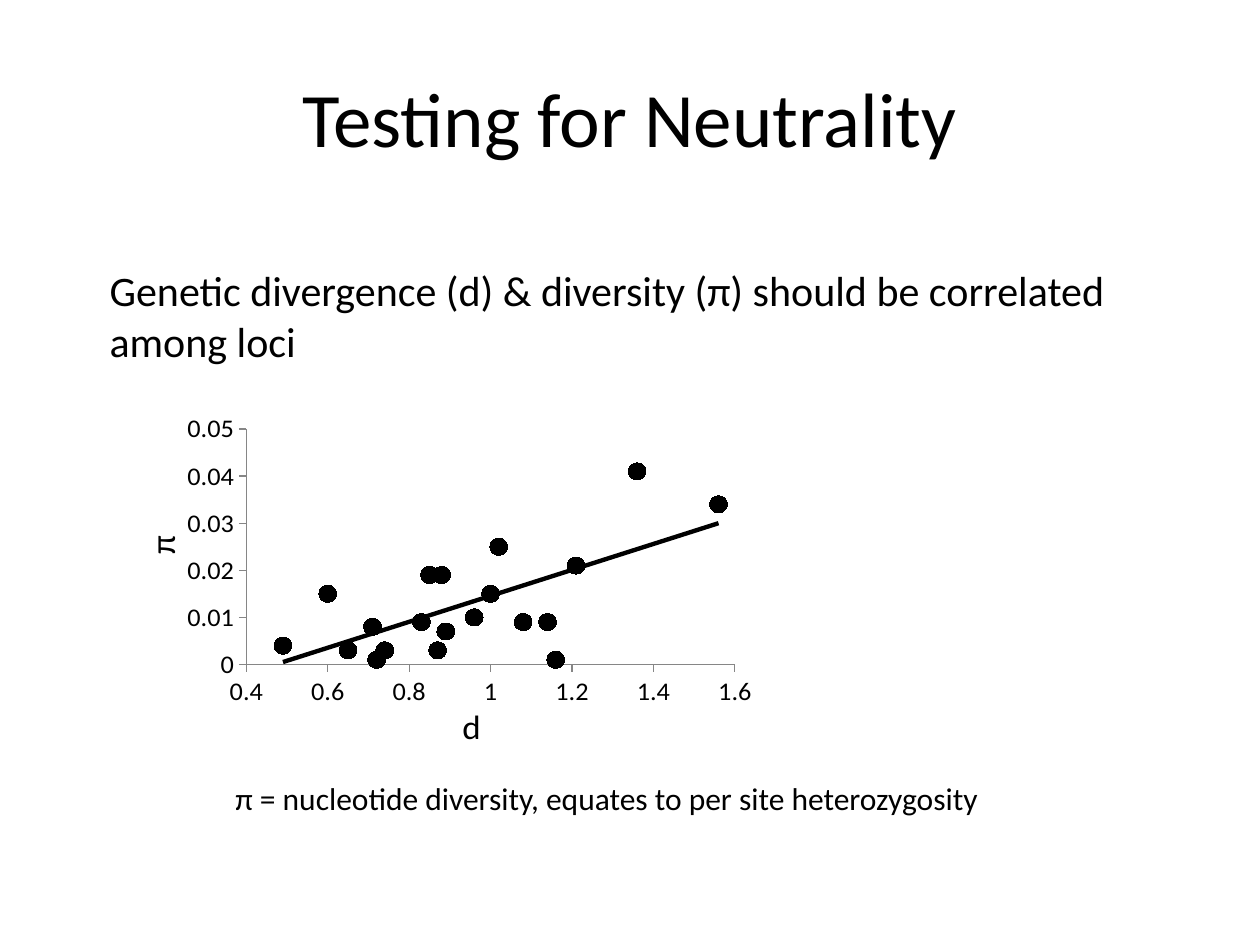
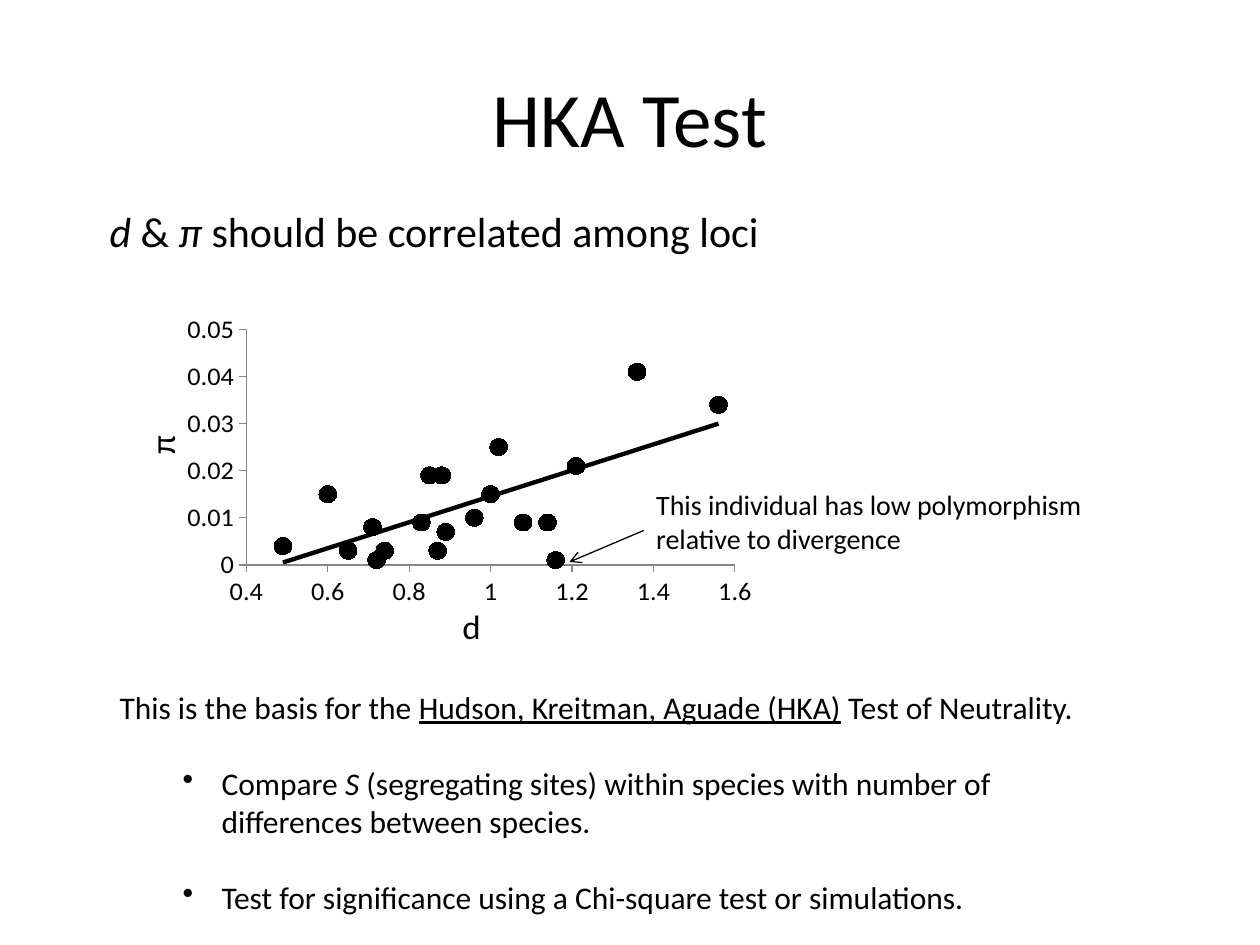
from pptx import Presentation
from pptx import oxml, util as u
from pptx.chart import data
from pptx.dml.color import RGBColor
from pptx.enum import chart as ch, shapes, text
from pptx.oxml import ns

FONT = "Calibri"
BLACK = RGBColor(0, 0, 0)
GREY = RGBColor(0x86, 0x86, 0x86)
TITLE = (0.5, 0.3, 9, 1.25)
BODY = (0.77, 1.58, 8.51, 4.95)
PLOT = (0.88, 5.17, 2.75)  # left, width, height

LOCI = [
    (0.72, 0.001), (1.16, 0.001), (0.49, 0.004), (0.74, 0.003),
    (0.65, 0.003), (0.71, 0.008), (0.89, 0.007), (0.87, 0.003),
    (0.83, 0.009), (1.14, 0.009), (1.08, 0.009), (0.85, 0.019),
    (1, 0.015), (0.6, 0.015), (0.96, 0.01), (0.88, 0.019),
    (1.21, 0.021), (1.02, 0.025), (1.56, 0.034), (1.36, 0.041),
]


def inches(box):
    return [u.Inches(n) for n in box]


def style(font, size):
    font.name, font.size, font.bold = FONT, u.Pt(size), False
    font.color.rgb = BLACK


def write(frame, *runs, size=18, align=None, before=None, bullet=False):
    """Add a paragraph; a run is a string or a (string, "i" or "u") pair."""
    para = frame.paragraphs[0]
    if para.runs:
        para = frame.add_paragraph()
    para.alignment = align
    if before is not None:
        para.space_before = u.Pt(before)
    for item in runs:
        words, mark = (item, "") if isinstance(item, str) else item
        run = para.add_run()
        run.text = words
        style(run.font, size)
        if mark == "i":
            run.font.italic = True
        elif mark == "u":
            run.font.underline = True
    props = para._p.get_or_add_pPr()
    props.set("marL", str(u.Inches(0.81 if bullet else 0)))
    props.set("indent", str(u.Inches(-0.31 if bullet else 0)))
    kind = 'buChar char="•"' if bullet else "buNone"
    props.append(oxml.parse_xml(f"<a:{kind} {ns.nsdecls('a')}/>"))


def move(shape, box):
    shape.left, shape.top, shape.width, shape.height = inches(box)


def start(prs, title, *lead, drop=0):
    """Add a slide with its title and a lead text set down by drop inches."""
    slide = prs.slides.add_slide(prs.slide_layouts[1])
    head, body = slide.placeholders
    move(head, TITLE)
    head.text_frame.vertical_anchor = text.MSO_ANCHOR.MIDDLE
    write(head.text_frame, title, size=44, align=text.PP_ALIGN.CENTER)
    move(body, BODY)
    body.text_frame.margin_top = u.Inches(0.05 + drop)
    write(body.text_frame, *lead, size=24)
    return slide


def label(slide, box, wrap=True):
    frame = slide.shapes.add_textbox(*inches(box)).text_frame
    frame.word_wrap = wrap
    frame.auto_size = text.MSO_AUTO_SIZE.SHAPE_TO_FIT_TEXT
    return frame


def lay(node, spot, inner=False):
    """Place a chart part by fractions of the chart area."""
    old = node.find(ns.qn("c:layout"))
    rows = '<c:layoutTarget val="inner"/>' if inner else ""
    rows += '<c:xMode val="edge"/><c:yMode val="edge"/>'
    rows += "".join(f'<c:{k} val="{v}"/>' for k, v in zip("xywh", spot))
    new = oxml.parse_xml(
        f"<c:layout {ns.nsdecls('c')}><c:manualLayout>{rows}"
        "</c:manualLayout></c:layout>")
    if old is None:
        node.insert(0 if inner else 1, new)
    else:
        node.replace(old, new)


def scale(axis, name, low, high, step, spot):
    axis.minimum_scale, axis.maximum_scale = low, high
    axis.major_unit = step
    axis.has_major_gridlines = False
    axis.major_tick_mark = ch.XL_TICK_MARK.OUTSIDE
    axis.minor_tick_mark = ch.XL_TICK_MARK.NONE
    axis.tick_labels.number_format = "General"
    axis.tick_labels.number_format_is_linked = False
    style(axis.tick_labels.font, 15)
    axis.format.line.color.rgb = GREY
    axis.format.line.width = u.Pt(0.75)
    write(axis.axis_title.text_frame, name, size=20)
    lay(axis.axis_title.element, spot)


def scatter(slide, top):
    left, wide, high = PLOT
    points = data.XyChartData()
    series = points.add_series("Series 1")
    for d, pi in LOCI:
        series.add_data_point(d, pi)
    chart = slide.shapes.add_chart(
        ch.XL_CHART_TYPE.XY_SCATTER, *inches((left, top, wide, high)),
        points).chart
    chart.has_legend = chart.has_title = False
    style(chart.font, 15)
    chart.plots[0].vary_by_categories = False
    scale(chart.category_axis, "d", 0.4, 1.6, 0.2, (0.53, 0.85))
    scale(chart.value_axis, "π", 0, 0.05, 0.01, (0.03, 0.35))
    turn = chart.value_axis.axis_title.text_frame._txBody.bodyPr
    turn.set("rot", "-5400000")
    turn.set("vert", "horz")
    lay(chart.element.find(".//" + ns.qn("c:plotArea")),
        (0.208, 0.051, 0.75, 0.704), inner=True)

    dots = chart.plots[0].series[0]
    dots.format.line.fill.background()
    dots.marker.style = ch.XL_MARKER_STYLE.CIRCLE
    dots.marker.size = 10
    for part in (dots.marker.format.fill, dots.marker.format.line.fill):
        part.solid()
        part.fore_color.rgb = BLACK
    trend = oxml.parse_xml(
        f"<c:trendline {ns.nsdecls('c', 'a')}><c:spPr>"
        f'<a:ln w="{u.Pt(2.5)}"><a:solidFill><a:srgbClr val="{BLACK}"/>'
        '</a:solidFill></a:ln></c:spPr><c:trendlineType val="linear"/>'
        '<c:dispRSqr val="0"/><c:dispEq val="0"/></c:trendline>')
    chart.element.find(".//" + ns.qn("c:xVal")).addprevious(trend)


def arrow(slide, tail, tip):
    line = slide.shapes.add_connector(
        shapes.MSO_CONNECTOR.STRAIGHT, *inches(tail + tip))
    line.line.color.rgb = BLACK
    line.line.width = u.Pt(0.75)
    line.line._get_or_add_ln().append(
        oxml.parse_xml(f'<a:tailEnd {ns.nsdecls("a")} type="arrow"/>'))
    line._element.spPr.append(
        oxml.parse_xml(f"<a:effectLst {ns.nsdecls('a')}/>"))


def neutral(prs):
    slide = start(
        prs, "Testing for Neutrality",
        "Genetic divergence (d) & diversity (π) should be correlated "
        "among loci", drop=0.47)
    scatter(slide, 3.27)
    write(label(slide, (1.77, 6.13, 6.19, 0.4), wrap=False),
          "π = nucleotide diversity, equates to per site heterozygosity")


def hka(prs):
    slide = start(prs, "HKA Test", ("d", "i"), " & ", ("π ", "i"),
                  "should be correlated among loci")
    scatter(slide, 2.48)
    arrow(slide, (5.11, 4.21), (4.52, 4.46))
    write(label(slide, (5.11, 3.82, 3.64, 0.64)),
          "This individual has low polymorphism relative to divergence",
          size=16)
    basis = label(slide, (0.85, 5.41, 8.18, 1.92))
    write(basis, "This is the basis for the ",
          ("Hudson, Kreitman, Aguade (HKA)", "u"), " Test of Neutrality.")
    write(basis, "Compare ", ("S", "i"),
          " (segregating sites) within species with number of differences "
          "between species.", before=22, bullet=True)
    write(basis,
          "Test for significance using a Chi-square test or simulations.",
          before=22, bullet=True)


def main():
    prs = Presentation()
    prs.slide_width, prs.slide_height = inches((10, 7.5))
    neutral(prs)
    hka(prs)
    prs.save("out.pptx")


if __name__ == "__main__":
    main()
